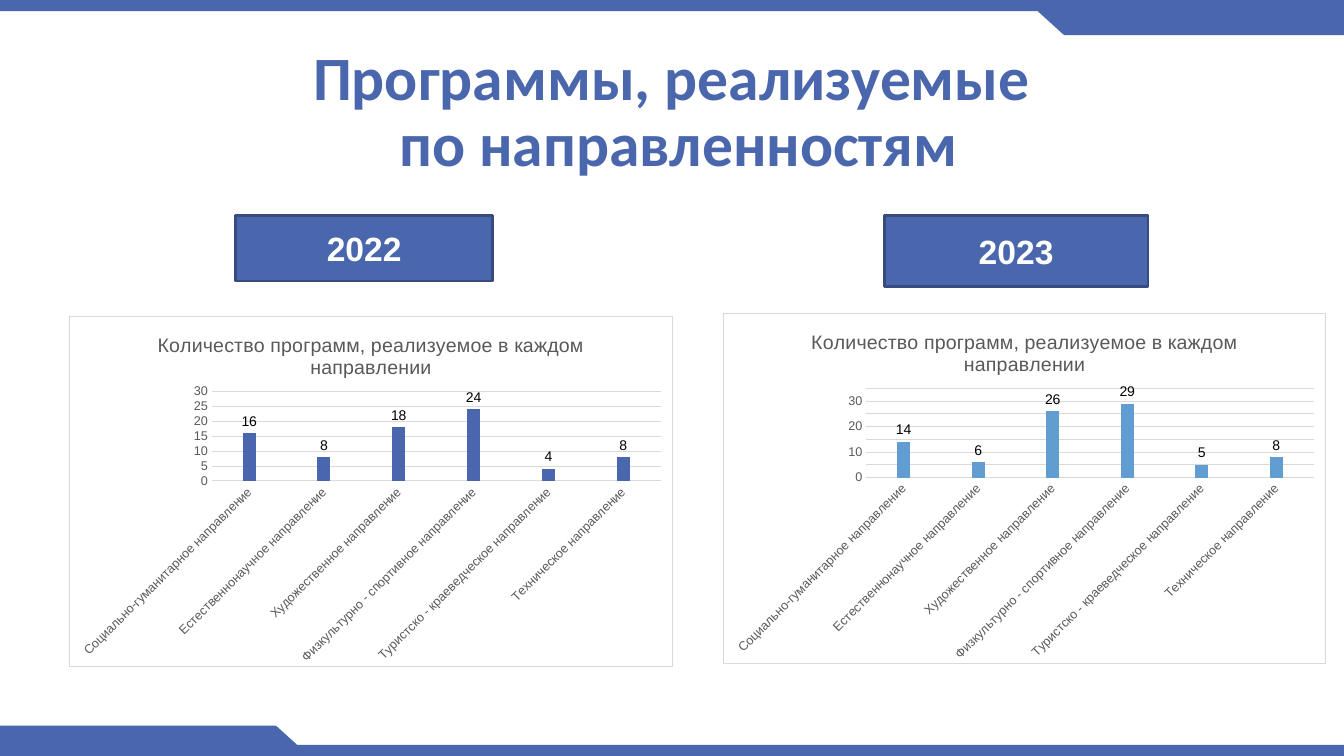
from dataclasses import dataclass

import pptx
import pptx.chart.data
import pptx.dml.color
import pptx.enum.chart
import pptx.enum.shapes
import pptx.enum.text
import pptx.oxml
import pptx.oxml.ns
import pptx.util

Pt = pptx.util.Pt
SHAPE = pptx.enum.shapes.MSO_SHAPE


def rgb(code):
    return pptx.dml.color.RGBColor.from_string(code)


@dataclass(frozen=True)
class Theme:
    blue: str = "4A66AC"
    dark_blue: str = "374B7F"
    sky: str = "629DD1"
    bright: str = "297FD5"
    white: str = "FFFFFF"
    black: str = "000000"
    grey: str = "595959"
    rule: str = "D9D9D9"
    heading_font: str = "Calibri"
    body_font: str = "Arial"
    heading_size: int = 44
    year_size: int = 24
    chart_title_size: int = 14
    label_size: int = 10
    axis_size: int = 9


THEME = Theme()
WIDTH, HEIGHT = 960, 540
CHART_TITLE = "Количество программ, реализуемое в каждом направлении"
DIRECTIONS = [
    "Социально-гуманитарное направление",
    "Естественнонаучное направление",
    "Художественное направление",
    "Физкультурно - спортивное направление",
    "Туристско - краеведческое направление",
    "Техническое направление",
]


def set_font(font, name, size, color, bold=False):
    font.name, font.size, font.bold = name, Pt(size), bold
    font.color.rgb = rgb(color)


def add_block(slide, preset, box, rotation=0):
    """Add a plain blue shape without outline or shadow."""
    block = slide.shapes.add_shape(preset, *map(Pt, box))
    block.rotation = rotation
    block.shadow.inherit = False
    block.fill.solid()
    block.fill.fore_color.rgb = rgb(THEME.blue)
    block.line.fill.background()
    return block


def add_edge_bands(slide):
    band, tab_width, tab_height, slant = 8, 200, 21.6, 47.5
    for top in (0, HEIGHT - band):
        add_block(slide, SHAPE.RECTANGLE, (0, top, WIDTH, band))
    add_block(slide, SHAPE.RECTANGLE, (WIDTH - tab_width, 3.6, tab_width, tab_height))
    add_block(slide, SHAPE.FLOWCHART_MERGE, (736, 3.2, slant, tab_height))
    bottom = HEIGHT - tab_height
    add_block(slide, SHAPE.RECTANGLE, (-3, bottom, tab_width, tab_height))
    add_block(slide, SHAPE.FLOWCHART_MERGE, (173.5, bottom, slant, tab_height), 180)


def set_title(slide, text):
    title = slide.shapes.title
    title.left, title.top, title.width, title.height = map(Pt, (66, 28.75, 828, 104.4))
    frame = title.text_frame
    frame.text = text
    frame.word_wrap = True
    frame.auto_size = pptx.enum.text.MSO_AUTO_SIZE.NONE
    frame.vertical_anchor = pptx.enum.text.MSO_ANCHOR.MIDDLE
    line = frame.paragraphs[0]
    line.alignment = pptx.enum.text.PP_ALIGN.CENTER
    line.line_spacing = 0.9
    set_font(line.font, THEME.heading_font, THEME.heading_size, THEME.blue, True)


def add_year(slide, year, box):
    badge = add_block(slide, SHAPE.RECTANGLE, box)
    badge.line.color.rgb = rgb(THEME.dark_blue)
    badge.line.width = Pt(2)
    frame = badge.text_frame
    frame.text = year
    frame.vertical_anchor = pptx.enum.text.MSO_ANCHOR.MIDDLE
    line = frame.paragraphs[0]
    line.alignment = pptx.enum.text.PP_ALIGN.CENTER
    set_font(line.font, THEME.body_font, THEME.year_size, THEME.white, True)


def frame_chart(chart):
    """Give the chart area a white fill and a thin border."""
    area = pptx.oxml.parse_xml(
        f'<c:spPr {pptx.oxml.ns.nsdecls("c", "a")}>'
        f'<a:solidFill><a:srgbClr val="{THEME.white}"/></a:solidFill>'
        f'<a:ln w="{Pt(0.75)}"><a:solidFill><a:srgbClr val="{THEME.rule}"/>'
        "</a:solidFill></a:ln></c:spPr>"
    )
    chart._chartSpace.xpath("c:txPr")[0].addprevious(area)


def style_axes(chart, top_value):
    categories, values = chart.category_axis, chart.value_axis
    for axis in (categories, values):
        axis.major_tick_mark = pptx.enum.chart.XL_TICK_MARK.NONE
        axis.minor_tick_mark = pptx.enum.chart.XL_TICK_MARK.NONE
        set_font(axis.tick_labels.font, THEME.body_font, THEME.axis_size, THEME.grey)
    values.minimum_scale, values.maximum_scale, values.major_unit = 0, top_value, 5
    values.has_major_gridlines = True
    values.format.line.fill.background()
    for rule in (categories.format.line, values.major_gridlines.format.line):
        rule.color.rgb = rgb(THEME.rule)
        rule.width = Pt(0.75)
    slant = chart._chartSpace.xpath(".//c:catAx/c:txPr/a:bodyPr")[0]
    slant.set("rot", str(-45 * 60000))
    slant.set("vert", "horz")


def add_programme_chart(slide, counts, color, top_value, box):
    """Draw the counts as the middle of three series, the outer two being empty."""
    data = pptx.chart.data.CategoryChartData()
    data.categories = DIRECTIONS
    empty = [None] * len(DIRECTIONS)
    for number, values in enumerate((empty, counts, empty), 1):
        data.add_series(f"Series {number}", values)
    chart = slide.shapes.add_chart(
        pptx.enum.chart.XL_CHART_TYPE.COLUMN_CLUSTERED, *map(Pt, box), data
    ).chart
    set_font(chart.font, THEME.body_font, THEME.label_size, THEME.black)
    frame_chart(chart)
    chart.has_legend = False
    chart.has_title = True
    heading = chart.chart_title
    heading.include_in_layout = False
    heading.text_frame.text = CHART_TITLE
    set_font(heading.text_frame.paragraphs[0].font,
             THEME.body_font, THEME.chart_title_size, THEME.grey)
    style_axes(chart, top_value)

    plot = chart.plots[0]
    plot.gap_width, plot.overlap, plot.vary_by_categories = 219, -27, False
    for series, fill in zip(plot.series, (THEME.blue, color, THEME.bright)):
        series.format.fill.solid()
        series.format.fill.fore_color.rgb = rgb(fill)
    labels = plot.series[1].data_labels
    labels.show_value = True
    labels.position = pptx.enum.chart.XL_LABEL_POSITION.OUTSIDE_END
    set_font(labels.font, THEME.body_font, THEME.label_size, THEME.black)


def main():
    deck = pptx.Presentation()
    deck.slide_width, deck.slide_height = Pt(WIDTH), Pt(HEIGHT)
    slide = deck.slides.add_slide(deck.slide_layouts.get_by_name("Title Only"))
    add_edge_bands(slide)
    set_title(slide, "Программы, реализуемые\v по направленностям")
    add_year(slide, "2022", (168.3, 154, 183.6, 46.8))
    add_year(slide, "2023", (631.5, 154, 188.6, 50.6))
    add_programme_chart(slide, (16, 8, 18, 24, 4, 8), THEME.blue, 30,
                        (49.3, 225.7, 431.5, 251))
    add_programme_chart(slide, (14, 6, 26, 29, 5, 8), THEME.sky, 35,
                        (516.7, 223.5, 430.5, 250.5))
    deck.save("out.pptx")


if __name__ == "__main__":
    main()
